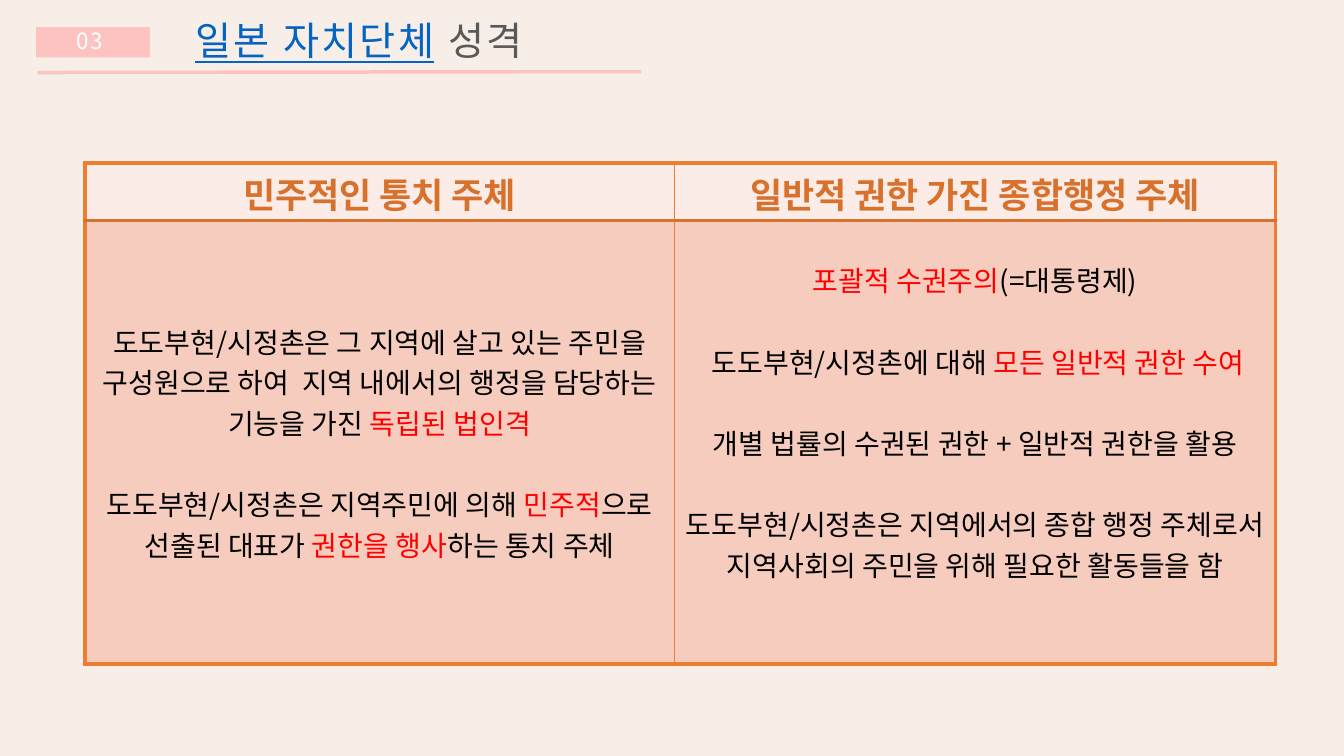
from pptx import Presentation
from pptx.dml.color import RGBColor
from pptx.enum.shapes import MSO_CONNECTOR as Connector, MSO_SHAPE as Shape
from pptx.enum.text import MSO_ANCHOR as Anchor, MSO_AUTO_SIZE as AutoSize, PP_ALIGN as Align
from pptx.oxml.ns import qn
from pptx.util import Inches, Pt
from lxml.etree import SubElement

FONT = "Noto Sans CJK KR"
PINK, ORANGE, RUST = "FCC3C0", "ED7D31", "D7712C"
BLACK, RED = "000000", "FF0000"


def color(value):
    return RGBColor.from_string(value)


def add_span(para, text, size, hue, bold=False, spacing=0):
    """Add one run; spacing is the letter spacing in points."""
    para.alignment = Align.CENTER
    span = para.add_run()
    span.text = text
    font = span.font
    font.size, font.bold, font.name = Pt(size), bold, FONT
    font.color.rgb = color(hue)
    properties = span._r.get_or_add_rPr()
    SubElement(properties, qn("a:ea"), typeface=FONT)
    if spacing:
        properties.set("spc", str(int(spacing * 100)))
    return span


deck = Presentation()
deck.slide_width, deck.slide_height = Inches(13.33), Inches(7.5)
page = deck.slides.add_slide(deck.slide_layouts[5])
page.background.fill.solid()
page.background.fill.fore_color.rgb = color("F7EEE7")

# Heading: number badge, title and rule
badge = page.shapes.add_shape(Shape.RECTANGLE, Inches(0.36), Inches(0.27), Inches(1.13), Inches(0.3))
badge.shadow.inherit = False
badge.fill.solid()
badge.fill.fore_color.rgb = color(PINK)
badge.line.fill.background()

title = page.shapes.title
title.left, title.top, title.width, title.height = Inches(1.14), Inches(0.12), Inches(4.84), Inches(0.56)
title.text_frame.auto_size = AutoSize.NONE
title.text_frame.vertical_anchor = Anchor.MIDDLE
para = title.text_frame.paragraphs[0]
para.line_spacing = 1.0
add_span(para, "일본 자치단체", 28, "0563C1", spacing=1.7).font.underline = True
add_span(para, " 성격", 28, "595959", spacing=1.7)

number = page.shapes.add_textbox(Inches(0.63), Inches(0.22), Inches(0.52), Inches(0.37))
number.text_frame.word_wrap = False
add_span(number.text_frame.paragraphs[0], "03", 16, "FFFFFF", spacing=1)

rule = page.shapes.add_connector(Connector.STRAIGHT, Inches(0.37), Inches(0.72), Inches(6.36), Inches(0.71))
rule.line.color.rgb = color(PINK)
rule.line.width = Pt(2.5)
SubElement(rule._element.spPr, qn("a:effectLst"))

# Table: each cell is a list of paragraphs, each paragraph a list of (text, colour)
headers = ["민주적인 통치 주체", "일반적 권한 가진 종합행정 주체"]
bodies = [
    [
        [("도도부현/시정촌은 그 지역에 살고 있는 주민을 구성원으로 하여  지역 내에서의 행정을 담당하는 기능을 가진 ", BLACK),
         ("독립된 법인격", RED)],
        [("도도부현/시정촌은 지역주민에 의해 ", BLACK), ("민주적", RED), ("으로 선출된 대표가 ", BLACK),
         ("권한을 행사", RED), ("하는 통치 주체", BLACK)],
    ],
    [
        [("포괄적 수권주의", RED), ("(=대통령제)", BLACK)],
        [(" 도도부현/시정촌에 대해 ", BLACK), ("모든 일반적 권한 수여", RED)],
        [("개별 법률의 수권된 권한 + 일반적 권한을 활용", BLACK)],
        [("도도부현/시정촌은 지역에서의 종합 행정 주체로서 지역사회의 주민을 위해 필요한 활동들을 함", BLACK)],
    ],
]
rows = [[[[(text, RUST)]] for text in headers], bodies]
row_styles = [("FCECE8", 25, True), ("F6CCBE", 20, False)]
outer, inner, divider = (ORANGE, 3.15), (ORANGE, 1), (RUST, 2.79)
column_edges = [outer, inner, outer]
row_edges = [outer, divider, outer]

table = page.shapes.add_table(2, 2, Inches(0.84), Inches(1.62), Inches(11.81), Inches(4.97)).table
table.horz_banding = False
for column, width in zip(table.columns, (5.85, 5.96)):
    column.width = Inches(width)
for row, height in zip(table.rows, (0.57, 4.4)):
    row.height = Inches(height)

for r, (fill, size, bold) in enumerate(row_styles):
    for c, paragraphs in enumerate(rows[r]):
        cell = table.cell(r, c)
        cell.vertical_anchor = Anchor.MIDDLE
        edges = {"a:lnL": column_edges[c], "a:lnR": column_edges[c + 1],
                 "a:lnT": row_edges[r], "a:lnB": row_edges[r + 1]}
        for tag, (hue, weight) in edges.items():
            border = SubElement(cell._tc.get_or_add_tcPr(), qn(tag), w=str(Pt(weight)))
            SubElement(SubElement(border, qn("a:solidFill")), qn("a:srgbClr"), val=hue)
        cell.fill.solid()
        cell.fill.fore_color.rgb = color(fill)
        for i, spans in enumerate(paragraphs):
            para = cell.text_frame.add_paragraph() if i else cell.text_frame.paragraphs[0]
            if i:
                para.space_before = Pt(29)
            for text, hue in spans:
                add_span(para, text, size, hue, bold)

# The right-hand text sits a little above the middle of its cell
table.cell(1, 1).margin_bottom = Inches(0.46)

deck.save("out.pptx")
